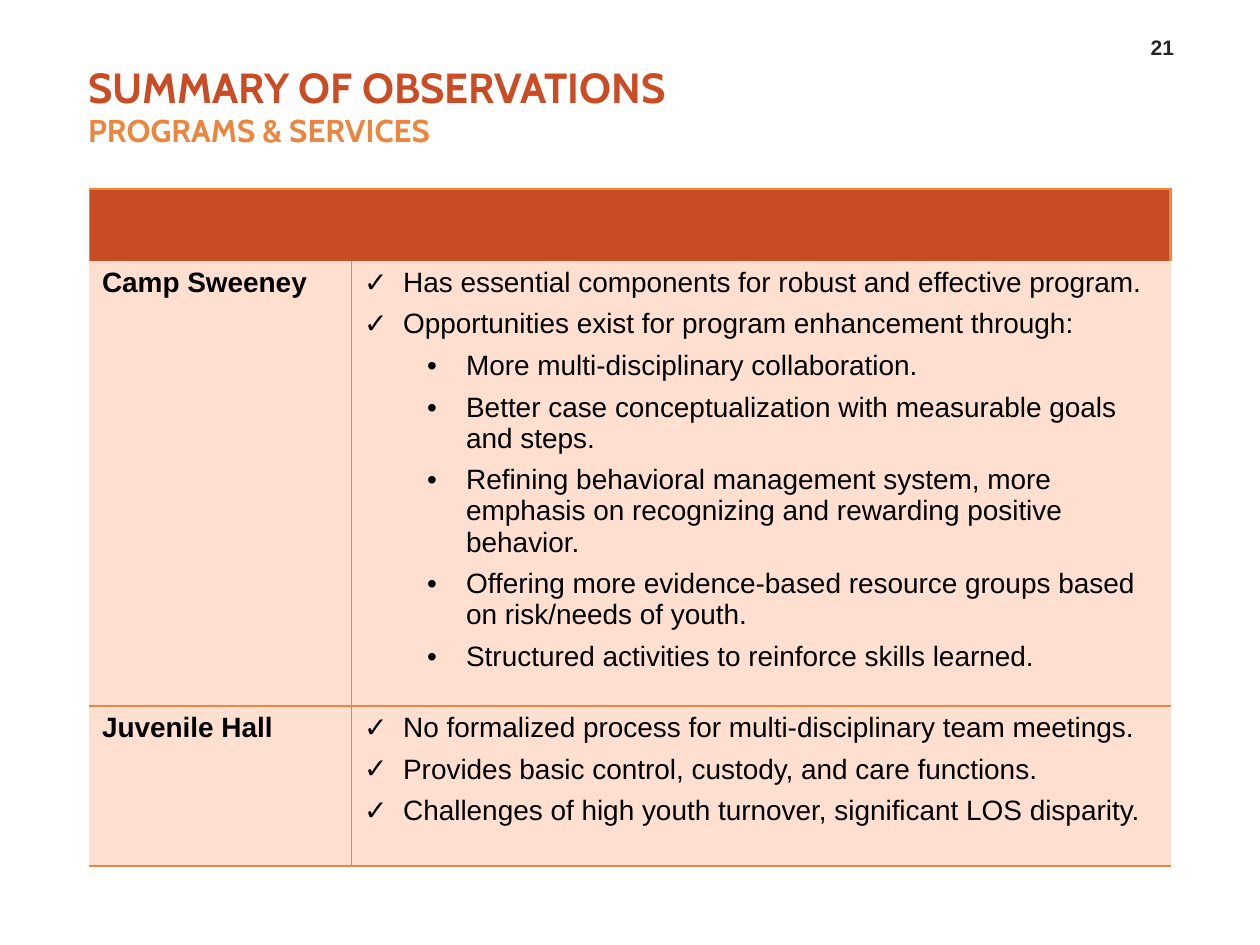
from dataclasses import dataclass

from lxml.etree import SubElement
from pptx import Presentation
from pptx.dml.color import RGBColor
from pptx.enum.text import MSO_ANCHOR, PP_ALIGN
from pptx.oxml.ns import qn
from pptx.util import Inches, Pt


@dataclass(frozen=True)
class Theme:
    """Colours, fonts and type sizes of the slide."""
    rust: str = "C94C25"
    orange: str = "EA8640"
    bright_orange: str = "FB832F"
    peach: str = "FFE0D0"
    black: str = "000000"
    charcoal: str = "262626"
    heading_font: str = "Cabin"
    body_font: str = "Arial"
    title_size: int = 24
    subtitle_size: int = 18
    body_size: int = 16
    number_size: int = 12


THEME = Theme()
PLAIN_TABLE_STYLE = "{2D5ABB26-0587-4C30-8999-92F81FD0307C}"
COLUMN_WIDTHS = (2.08, 6.5)
ROW_HEIGHTS = (0.57, 3.33, 1.27)
CHECK, DOT = ("✓", 0.31), ("•", 0.81)
OBSERVATIONS = [
    ("Camp Sweeney", [
        (CHECK, "Has essential components for robust and effective program."),
        (CHECK, "Opportunities exist for program enhancement through:"),
        (DOT, "More multi-disciplinary collaboration."),
        (DOT, "Better case conceptualization with measurable goals and steps."),
        (DOT, "Refining behavioral management system, more emphasis on "
              "recognizing and rewarding positive behavior."),
        (DOT, "Offering more evidence-based resource groups based on "
              "risk/needs of youth."),
        (DOT, "Structured activities to reinforce skills learned."),
    ]),
    ("Juvenile Hall", [
        (CHECK, "No formalized process for multi-disciplinary team meetings."),
        (CHECK, "Provides basic control, custody, and care functions."),
        (CHECK, "Challenges of high youth turnover, significant LOS disparity."),
    ]),
]


def style_font(font, name, size, color, bold=False):
    """Set the face, size, colour and weight of a font."""
    font.name, font.size, font.bold = name, Pt(size), bold
    font.color.rgb = RGBColor.from_string(color)


def add_text_frame(slide, left, top, width, height, anchor):
    """Add a wrapping text box and return its text frame."""
    frame = slide.shapes.add_textbox(left, top, width, height).text_frame
    frame.word_wrap = True
    frame.vertical_anchor = anchor
    return frame


def add_title(slide, left, top, width, height):
    """Add the two-line title in the given box."""
    frame = add_text_frame(slide, left, top, width, height, MSO_ANCHOR.MIDDLE)
    frame.margin_left = frame.margin_right = 0
    paragraph = frame.paragraphs[0]
    title = paragraph.add_run()
    title.text = "SUMMARY OF OBSERVATIONS"
    style_font(title.font, THEME.heading_font, THEME.title_size, THEME.rust, True)
    paragraph.add_line_break()
    subtitle = paragraph.add_run()
    subtitle.text = "PROGRAMS & SERVICES"
    style_font(subtitle.font, THEME.heading_font, THEME.subtitle_size, THEME.orange, True)


def add_page_number(slide, left, top, width, height):
    """Add the page number in the given box."""
    frame = add_text_frame(slide, left, top, width, height, MSO_ANCHOR.BOTTOM)
    paragraph = frame.paragraphs[0]
    paragraph.text = "21"
    paragraph.alignment = PP_ALIGN.CENTER
    style_font(paragraph.font, THEME.body_font, THEME.number_size, THEME.charcoal, True)


def style_cell(cell, fill, borders):
    """Fill a cell and draw its borders, keyed by side in L, R, T, B order."""
    properties = cell._tc.get_or_add_tcPr()
    for side, (color, width) in borders.items():
        line = SubElement(properties, qn(f"a:ln{side}"), w=str(Pt(width)))
        solid = SubElement(line, qn("a:solidFill"))
        SubElement(solid, qn("a:srgbClr"), val=color)
    cell.fill.solid()
    cell.fill.fore_color.rgb = RGBColor.from_string(fill)


def write_bullet(paragraph, bullet, text):
    """Write one bulleted observation with a hanging indent."""
    character, margin = bullet
    paragraph.text = text
    paragraph.space_after = Pt(6)
    properties = paragraph._p.get_or_add_pPr()
    properties.set("marL", str(Inches(margin)))
    properties.set("indent", str(Inches(-0.31)))
    SubElement(properties, qn("a:buFont"), typeface=THEME.body_font)
    SubElement(properties, qn("a:buChar"), char=character)
    style_font(paragraph.font, THEME.body_font, THEME.body_size, THEME.black)


def add_observation_table(slide, left, top, width, height):
    """Add the table of observations for each facility."""
    table = slide.shapes.add_table(
        len(ROW_HEIGHTS), len(COLUMN_WIDTHS), left, top, width, height).table
    table.first_row = table.horz_banding = False
    table._tbl.tblPr.find(qn("a:tableStyleId")).text = PLAIN_TABLE_STYLE
    for column, size in zip(table.columns, COLUMN_WIDTHS):
        column.width = Inches(size)
    for row, size in zip(table.rows, ROW_HEIGHTS):
        row.height = Inches(size)

    table.cell(0, 0).merge(table.cell(0, 1))
    edge, rule = (THEME.bright_orange, 0.75), (THEME.orange, 1)
    heading_borders = {"L": edge, "R": (THEME.orange, 2), "T": edge}
    style_cell(table.cell(0, 0), THEME.rust, heading_borders)
    for index, (facility, bullets) in enumerate(OBSERVATIONS, start=1):
        name_cell, notes_cell = table.cell(index, 0), table.cell(index, 1)
        horizontal = {"T": rule, "B": rule} if index > 1 else {"B": rule}
        style_cell(name_cell, THEME.peach, {"R": rule, **horizontal})
        style_cell(notes_cell, THEME.peach, {"L": rule, **horizontal})
        paragraph = name_cell.text_frame.paragraphs[0]
        paragraph.text = facility
        style_font(paragraph.font, THEME.body_font, THEME.body_size, THEME.black, True)
        frame = notes_cell.text_frame
        for position, (bullet, text) in enumerate(bullets):
            paragraph = frame.add_paragraph() if position else frame.paragraphs[0]
            write_bullet(paragraph, bullet, text)


def main():
    """Build and save the slide."""
    presentation = Presentation()
    presentation.slide_width, presentation.slide_height = Inches(10), Inches(7.5)
    slide = presentation.slides.add_slide(presentation.slide_layouts[6])
    add_title(slide, Inches(0.7), Inches(0.4), Inches(5.13), Inches(0.87))
    add_page_number(slide, Inches(8.95), Inches(0.19), Inches(0.55), Inches(0.33))
    add_observation_table(slide, Inches(0.71), Inches(1.5),
                          Inches(sum(COLUMN_WIDTHS)), Inches(sum(ROW_HEIGHTS)))
    presentation.save("out.pptx")


if __name__ == "__main__":
    main()
